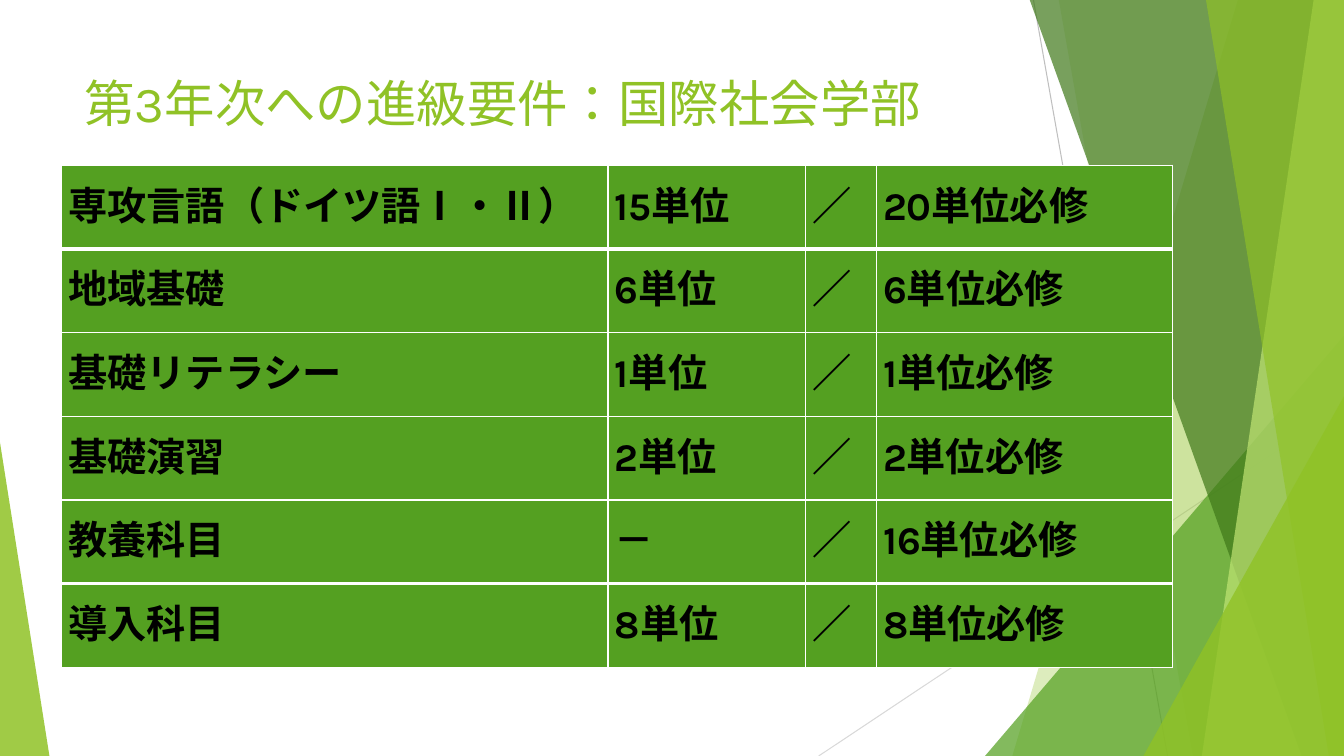
from pptx import Presentation
from pptx.dml.color import RGBColor
from pptx.enum.lang import MSO_LANGUAGE_ID as Lang
from pptx.enum.shapes import MSO_CONNECTOR as Conn, MSO_SHAPE as Shape
from pptx.enum.text import MSO_ANCHOR as Anchor, PP_ALIGN as Align
from pptx.oxml.ns import qn
from pptx.util import Inches, Pt
from lxml import etree

COLORS = {
    "lime": "90C226", "green": "54A021", "dark": "3F7819", "pale": "C0E474",
    "gray": "BFBFBF", "silver": "D9D9D9", "white": "FFFFFF", "black": "000000",
}
FONT = "Karla"
TOP, BASE, EDGE = -0.01, 7.5, 13.33

# top-left x, bottom-left x, colour, opacity in percent
BANDS = {
    "light": (12.28, 10.04, "lime", 30),
    "faint": (10.5, 11.83, "lime", 20),
    "deep": (10.21, 12.91, "dark", 70),
    "pale": (13.03, 11.92, "pale", 70),
    "bright": (11.96, 13.18, "lime", 65),
}
ROWS = [
    ("専攻言語（ドイツ語Ⅰ・Ⅱ）", "15単位", "20単位必修"),
    ("地域基礎", "6単位", "6単位必修"),
    ("基礎リテラシー", "1単位", "1単位必修"),
    ("基礎演習", "2単位", "2単位必修"),
    ("教養科目", "－", "16単位必修"),
    ("導入科目", "8単位", "8単位必修"),
]
WIDTHS = [5.42, 1.96, 0.7, 2.94]
ROW_H = 0.83


def rgb(name):
    return RGBColor.from_string(COLORS[name])


def write(frame, text, size, color, bold=False, align=Align.LEFT):
    para = frame.paragraphs[0]
    para.alignment = align
    run = para.add_run()
    run.text = text
    font = run.font
    font.size, font.bold, font.name = Pt(size), bold, FONT
    font.color.rgb = rgb(color)
    font.language_id = Lang.JAPANESE
    etree.SubElement(run._r.get_or_add_rPr(), qn("a:ea"), typeface=FONT)


def paint(shape, color, alpha):
    """Fill without outline or shadow; alpha is the opacity in percent."""
    shape.shadow.inherit = False
    shape.line.fill.background()
    shape.fill.solid()
    shape.fill.fore_color.rgb = rgb(color)
    tone = shape._element.spPr.find(qn("a:solidFill"))[0]
    etree.SubElement(tone, qn("a:alpha"), val=str(alpha * 1000))


def add_line(slide, start, end, color):
    ends = [Inches(v) for v in (*start, *end)]
    line = slide.shapes.add_connector(Conn.STRAIGHT, *ends)
    line.line.color.rgb = rgb(color)
    line.line.width = Pt(0.75)
    etree.SubElement(line._element.spPr, qn("a:effectLst"))


def add_band(slide, top_x, base_x, color, alpha):
    """Draw a slanted band that runs to the slide's right edge."""
    corners = [(top_x, TOP), (EDGE, TOP), (EDGE, BASE), (base_x, BASE)]
    points = [(Inches(x), Inches(y)) for x, y in corners]
    path = slide.shapes.build_freeform(*points[0])
    path.add_line_segments(points[1:], close=True)
    paint(path.convert_to_shape(), color, alpha)


def add_wedge(slide, left, top, width, apex, color, alpha):
    """Draw a right triangle on the slide's base; apex is 0 left or 1 right."""
    box = [Inches(v) for v in (left, top, width, BASE - top)]
    wedge = slide.shapes.add_shape(Shape.ISOSCELES_TRIANGLE, *box)
    wedge.adjustments[0] = apex
    paint(wedge, color, alpha)


def add_title(slide, text):
    box = [Inches(v) for v in (0.74, 0.67, 9.4, 1.44)]
    frame = slide.shapes.add_textbox(*box).text_frame
    frame.word_wrap = True
    write(frame, text, 36, "lime")


def set_borders(cell, top, bottom):
    props = cell._tc.get_or_add_tcPr()
    sides = {"lnL": 1, "lnR": 1, "lnT": top, "lnB": bottom}
    for i, (side, width) in enumerate(sides.items()):
        line = etree.Element(qn("a:" + side), w=str(Pt(width)))
        fill = etree.SubElement(line, qn("a:solidFill"))
        etree.SubElement(fill, qn("a:srgbClr"), val=COLORS["white"])
        props.insert(i, line)


def fill_cell(cell, text):
    cell.fill.solid()
    cell.fill.fore_color.rgb = rgb("green")
    cell.vertical_anchor = Anchor.MIDDLE
    cell.margin_left = cell.margin_right = Inches(0.07)
    cell.margin_top = cell.margin_bottom = 0
    write(cell.text_frame, text, 28, "black", bold=True, align=Align.JUSTIFY)


def add_credits(slide):
    """Add the table of credits, with heavy rules around its middle rows."""
    size = (0.61, 1.64, sum(WIDTHS), ROW_H * len(ROWS))
    box = [Inches(v) for v in size]
    table = slide.shapes.add_table(len(ROWS), len(WIDTHS), *box).table
    for col, width in zip(table.columns, WIDTHS):
        col.width = Inches(width)
    rules = [1] * (len(ROWS) + 1)
    rules[1] = rules[-2] = 3
    for r, (name, first, total) in enumerate(ROWS):
        table.rows[r].height = Inches(ROW_H)
        for c, text in enumerate((name, first, "／", total)):
            cell = table.cell(r, c)
            fill_cell(cell, text)
            set_borders(cell, rules[r], rules[r + 1])


def add_decor(slide):
    add_line(slide, (10.25, 0), (11.58, BASE), "gray")
    add_line(slide, (EDGE, 4.03), (8.12, BASE), "silver")
    add_band(slide, *BANDS["light"])
    add_band(slide, *BANDS["faint"])
    add_wedge(slide, 9.77, 3.33, 3.56, 1, "green", 72)
    for name in ("deep", "pale", "bright"):
        add_band(slide, *BANDS[name])
    add_wedge(slide, 11.34, 3.93, 1.99, 1, "lime", 80)
    add_wedge(slide, 0, 4.39, 0.49, 0, "lime", 85)


def main():
    deck = Presentation()
    deck.slide_width, deck.slide_height = Inches(EDGE), Inches(BASE)
    slide = deck.slides.add_slide(deck.slide_layouts[6])
    add_decor(slide)
    add_title(slide, "第3年次への進級要件：国際社会学部")
    add_credits(slide)
    deck.save("out.pptx")


if __name__ == "__main__":
    main()
